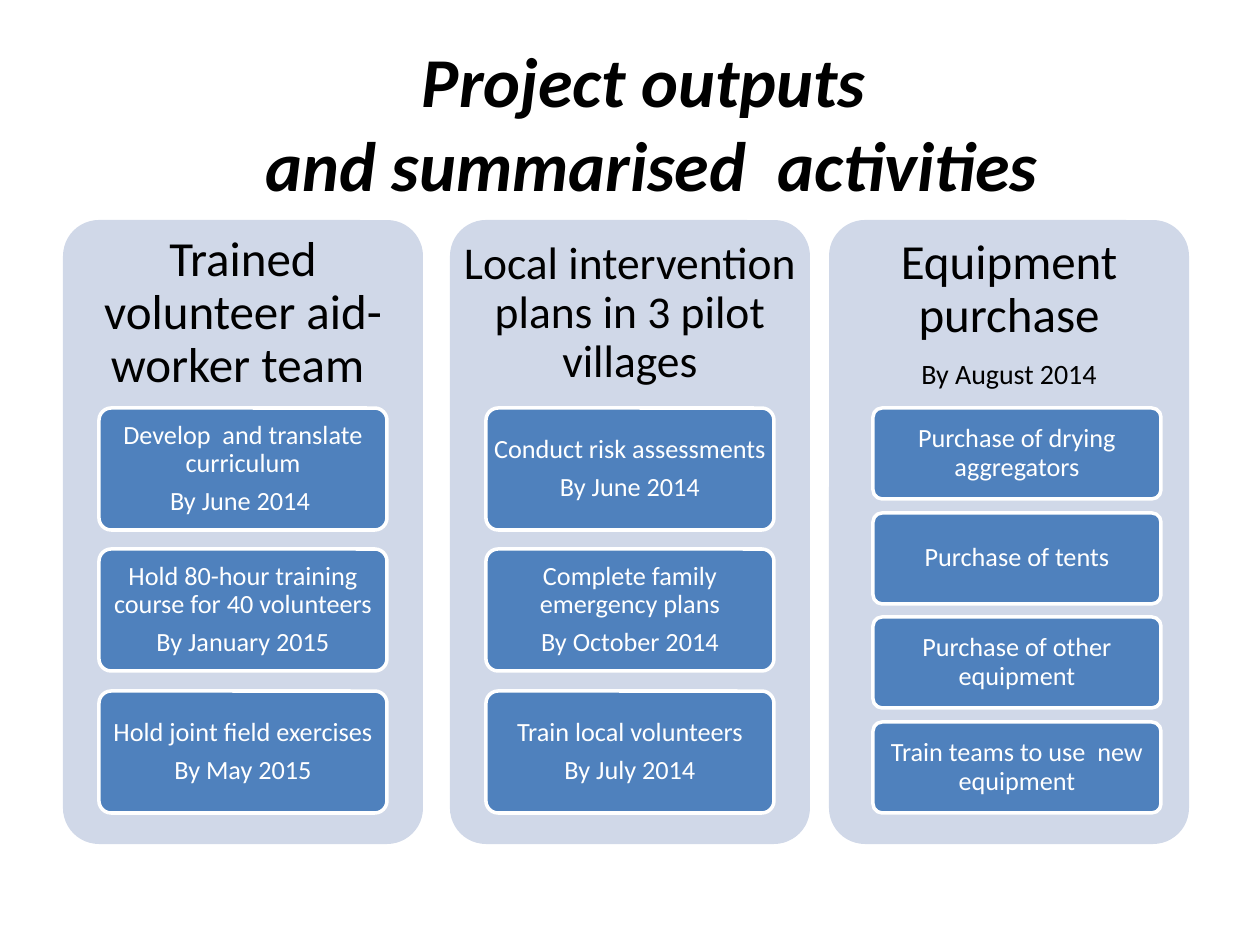
from pptx import Presentation
from pptx import util as u
from pptx.dml.color import RGBColor
from pptx.enum import shapes, text

BLACK = RGBColor(0x00, 0x00, 0x00)
WHITE = RGBColor(0xFF, 0xFF, 0xFF)
BLUE = RGBColor(0x4F, 0x81, 0xBD)
PALE = RGBColor(0xD0, 0xD8, 0xE8)

PANEL_TOP, PANEL_WIDTH, PANEL_HEIGHT, HEADING_HEIGHT = 220, 360, 624, 187
BOX_LEFT, BOX_STEP, BOX_WIDTH = 99, 387, 288
STACK_TOP, STACK_HEIGHT, GAP_RATIO = 408, 405, 2 / 13

COLUMNS = [
    (63, 15, [("Trained volunteer aid-worker team ", 28)], [
        ["Develop  and translate curriculum", "By June 2014 "],
        ["Hold 80-hour training course for 40 volunteers", "By January 2015"],
        ["Hold joint field exercises", "By May 2015"],
    ]),
    (450, 11, [("Local intervention plans in 3 pilot villages", 26)], [
        ["Conduct risk assessments", "By June 2014"],
        ["Complete family emergency plans", "By October 2014"],
        ["Train local volunteers", "By July 2014"],
    ]),
    (829, 15, [("Equipment purchase", 28), ("By August 2014", 16)], [
        ["Purchase of drying aggregators"],
        ["Purchase of tents"],
        ["Purchase of other equipment"],
        ["Train teams to use  new equipment"],
    ]),
]


def px(*lengths):
    return [u.Emu(round(length * 914400 / 126)) for length in lengths]


def write(box, lines, color=BLACK, margins=(13, 6), anchor=text.MSO_ANCHOR.MIDDLE,
          spacing=0.9, after=0.35, bold=False, italic=False):
    frame = box.text_frame
    frame.word_wrap = True
    frame.auto_size = text.MSO_AUTO_SIZE.NONE
    frame.vertical_anchor = anchor
    frame.margin_left, frame.margin_top = px(*margins)
    frame.margin_right, frame.margin_bottom = px(*margins)
    for index, (line, size) in enumerate(lines):
        para = frame.add_paragraph() if index else frame.paragraphs[0]
        para.alignment = text.PP_ALIGN.CENTER
        para.line_spacing = spacing
        para.space_after = u.Pt(round(size * after, 2))
        span = para.add_run()
        span.text = line
        span.font.name = "Calibri"
        span.font.size = u.Pt(size)
        span.font.bold = bold
        span.font.italic = italic
        span.font.color.rgb = color


deck = Presentation()
deck.slide_width, deck.slide_height = px(1260, 945)
page = deck.slides.add_slide(deck.slide_layouts[5])

title = page.shapes.title
title.left, title.top, title.width, title.height = px(116, 32, 1071, 183)
write(title, [("Project outputs ", 40), ("and summarised  activities", 40)],
      anchor=text.MSO_ANCHOR.TOP, spacing=1.0, after=0, bold=True, italic=True)

for column, (left, inset, heading, activities) in enumerate(COLUMNS):
    panel = page.shapes.add_shape(
        shapes.MSO_SHAPE.ROUNDED_RECTANGLE,
        *px(left, PANEL_TOP, PANEL_WIDTH, PANEL_HEIGHT))
    panel.shadow.inherit = False
    panel.adjustments[0] = 0.1
    panel.fill.solid()
    panel.fill.fore_color.rgb = PALE
    panel.line.fill.background()

    caption = page.shapes.add_textbox(*px(left, PANEL_TOP, PANEL_WIDTH, HEADING_HEIGHT))
    write(caption, heading, margins=(inset, inset))

    count = len(activities)
    height = STACK_HEIGHT / (count + (count - 1) * GAP_RATIO)
    for row, lines in enumerate(activities):
        top = round(STACK_TOP + row * height * (1 + GAP_RATIO))
        box = page.shapes.add_shape(
            shapes.MSO_SHAPE.ROUNDED_RECTANGLE,
            *px(BOX_LEFT + column * BOX_STEP, top, BOX_WIDTH, round(height)))
        box.shadow.inherit = False
        box.adjustments[0] = 0.1
        box.fill.solid()
        box.fill.fore_color.rgb = BLUE
        box.line.color.rgb = WHITE
        box.line.width = u.Pt(2)
        write(box, [(line, 15) for line in lines], color=WHITE, margins=(1, 0))

deck.save("out.pptx")
